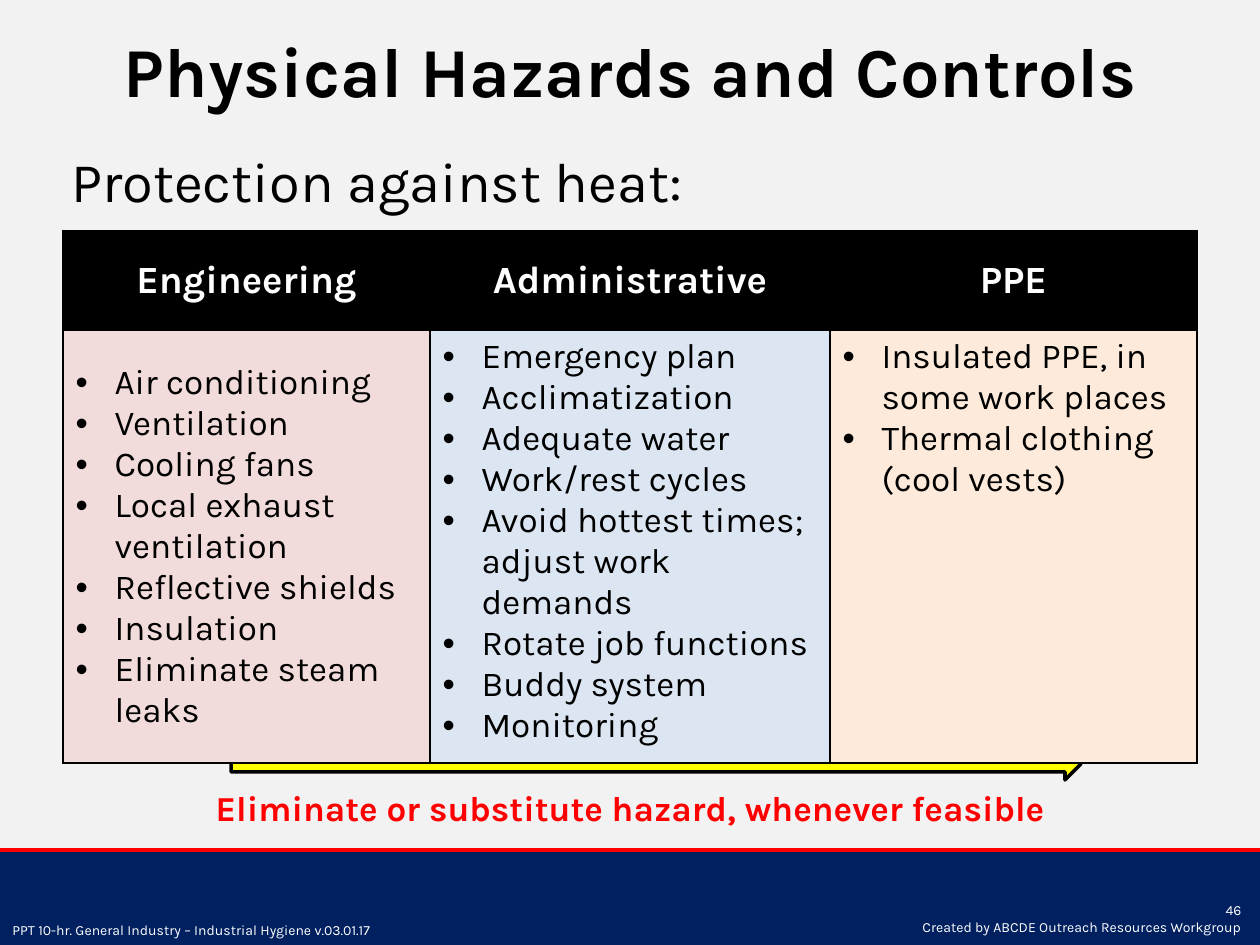
import pptx
import pptx.util
import pptx.dml.color
import pptx.enum.shapes
import pptx.enum.text
import pptx.oxml
import pptx.oxml.ns

RGB = pptx.dml.color.RGBColor
ALIGN = pptx.enum.text.PP_ALIGN
ANCHOR = pptx.enum.text.MSO_ANCHOR
SHAPE = pptx.enum.shapes.MSO_SHAPE
Pt = pptx.util.Pt

EMU_PER_PX = 914400 // 126
WIDTH, HEIGHT = 1260, 945
FONT = "Karla"

BLACK = RGB(0x00, 0x00, 0x00)
WHITE = RGB(0xFF, 0xFF, 0xFF)
RED = RGB(0xFF, 0x00, 0x00)
YELLOW = RGB(0xFF, 0xFF, 0x00)
NAVY = RGB(0x00, 0x20, 0x60)
GREY = RGB(0xF2, 0xF2, 0xF2)
PINK = RGB(0xF2, 0xDC, 0xDB)
BLUE = RGB(0xDC, 0xE6, 0xF2)
PEACH = RGB(0xFD, 0xEA, 0xDA)

# Heading, column width, fill, anchor, controls
CONTROLS = [
    ("Engineering", 367, PINK, ANCHOR.MIDDLE,
     ["Air conditioning", "Ventilation", "Cooling fans", "Local exhaust ventilation",
      "Reflective shields", "Insulation", "Eliminate steam leaks"]),
    ("Administrative", 400, BLUE, ANCHOR.TOP,
     ["Emergency plan", "Acclimatization", "Adequate water", "Work/rest cycles",
      "Avoid hottest times; adjust work demands", "Rotate job functions",
      "Buddy system", "Monitoring"]),
    ("PPE", 367, PEACH, ANCHOR.TOP,
     ["Insulated PPE, in some work places", "Thermal clothing (cool vests)"]),
]


def px(n):
    return pptx.util.Emu(n * EMU_PER_PX)


def write(tf, lines, size, color, bold=False, align=ALIGN.LEFT):
    tf.text = "\n".join(lines)
    for p in tf.paragraphs:
        p.alignment = align
        for r in p.runs:
            r.font.name = FONT
            r.font.size = Pt(size)
            r.font.bold = bold
            r.font.color.rgb = color


def add_text(slide, box, lines, size, color, bold=False, align=ALIGN.LEFT,
             anchor=ANCHOR.TOP):
    tf = slide.shapes.add_textbox(*map(px, box)).text_frame
    tf.word_wrap = True
    tf.vertical_anchor = anchor
    write(tf, lines, size, color, bold, align)
    return tf


def add_block(slide, kind, box, fill, line=None):
    sp = slide.shapes.add_shape(kind, *map(px, box))
    sp.shadow.inherit = False
    sp.fill.solid()
    sp.fill.fore_color.rgb = fill
    if line is None:
        sp.line.fill.background()
    else:
        sp.line.color.rgb = line
        sp.line.width = Pt(2)


def add_rule(slide, y, color):
    line = slide.shapes.add_connector(
        pptx.enum.shapes.MSO_CONNECTOR.STRAIGHT, px(0), px(y), px(WIDTH), px(y))
    line.line.color.rgb = color
    line.line.width = Pt(2)
    pptx.oxml.ns.qn("a:effectLst")
    line._element.spPr.append(
        pptx.oxml.parse_xml(f'<a:effectLst {pptx.oxml.ns.nsdecls("a")}/>'))


def add_bullet(p, indent):
    pPr = p._p.get_or_add_pPr()
    pPr.set("marL", str(px(indent)))
    pPr.set("indent", str(-px(indent)))
    pPr.append(pptx.oxml.parse_xml(
        f'<a:buFont {pptx.oxml.ns.nsdecls("a")} typeface="Arial"/>'))
    pPr.append(pptx.oxml.parse_xml(
        f'<a:buChar {pptx.oxml.ns.nsdecls("a")} char="•"/>'))


def style_cell(cell, fill, anchor):
    tcPr = cell._tc.get_or_add_tcPr()
    for side in ("lnL", "lnR", "lnT", "lnB"):
        tcPr.append(pptx.oxml.parse_xml(
            f'<a:{side} {pptx.oxml.ns.nsdecls("a")} w="{Pt(1)}">'
            f'<a:solidFill><a:srgbClr val="{BLACK}"/></a:solidFill></a:{side}>'))
    cell.fill.solid()
    cell.fill.fore_color.rgb = fill
    cell.vertical_anchor = anchor


def add_controls_table(slide, left, top, header_height, body_height):
    width = sum(column[1] for column in CONTROLS)
    table = slide.shapes.add_table(
        2, len(CONTROLS), px(left), px(top), px(width),
        px(header_height + body_height)).table
    table.rows[0].height = px(header_height)
    table.rows[1].height = px(body_height)
    for i, (heading, col_width, fill, anchor, items) in enumerate(CONTROLS):
        table.columns[i].width = px(col_width)
        head, body = table.cell(0, i), table.cell(1, i)
        style_cell(head, BLACK, ANCHOR.MIDDLE)
        write(head.text_frame, [heading], 22, WHITE, True, ALIGN.CENTER)
        style_cell(body, fill, anchor)
        write(body.text_frame, items, 20, BLACK)
        for p in body.text_frame.paragraphs:
            add_bullet(p, 39)


def main():
    prs = pptx.Presentation()
    prs.slide_width, prs.slide_height = px(WIDTH), px(HEIGHT)
    slide = prs.slides.add_slide(prs.slide_layouts[6])
    slide.background.fill.solid()
    slide.background.fill.fore_color.rgb = GREY

    # Footer band
    add_block(slide, SHAPE.RECTANGLE, (0, 850, WIDTH, 95), NAVY)
    add_rule(slide, 850, RED)
    add_text(slide, (0, 915, 400, 30),
             ["PPT 10-hr. General Industry – Industrial Hygiene v.03.01.17"], 8, WHITE)
    add_text(slide, (866, 889, 388, 59),
             ["46", "Created by ABCDE Outreach Resources Workgroup"], 8, WHITE,
             align=ALIGN.RIGHT, anchor=ANCHOR.MIDDLE)

    # Title and lead-in
    add_text(slide, (63, 21, 1134, 158), ["Physical Hazards and Controls"], 40, BLACK,
             True, ALIGN.CENTER)
    tf = add_text(slide, (59, 140, 1008, 128), ["Protection against heat:"], 32, BLACK)
    tf.paragraphs[0].space_before = Pt(6.4)

    # Priority message and arrow, partly behind the table
    add_text(slide, (158, 780, 945, 55),
             ["Eliminate or substitute hazard, whenever feasible"], 20, RED,
             True, ALIGN.CENTER)
    add_block(slide, SHAPE.RIGHT_ARROW, (231, 748, 850, 32), YELLOW, BLACK)

    # Controls by type
    add_controls_table(slide, 63, 231, 99, 433)

    prs.save("out.pptx")


if __name__ == "__main__":
    main()
